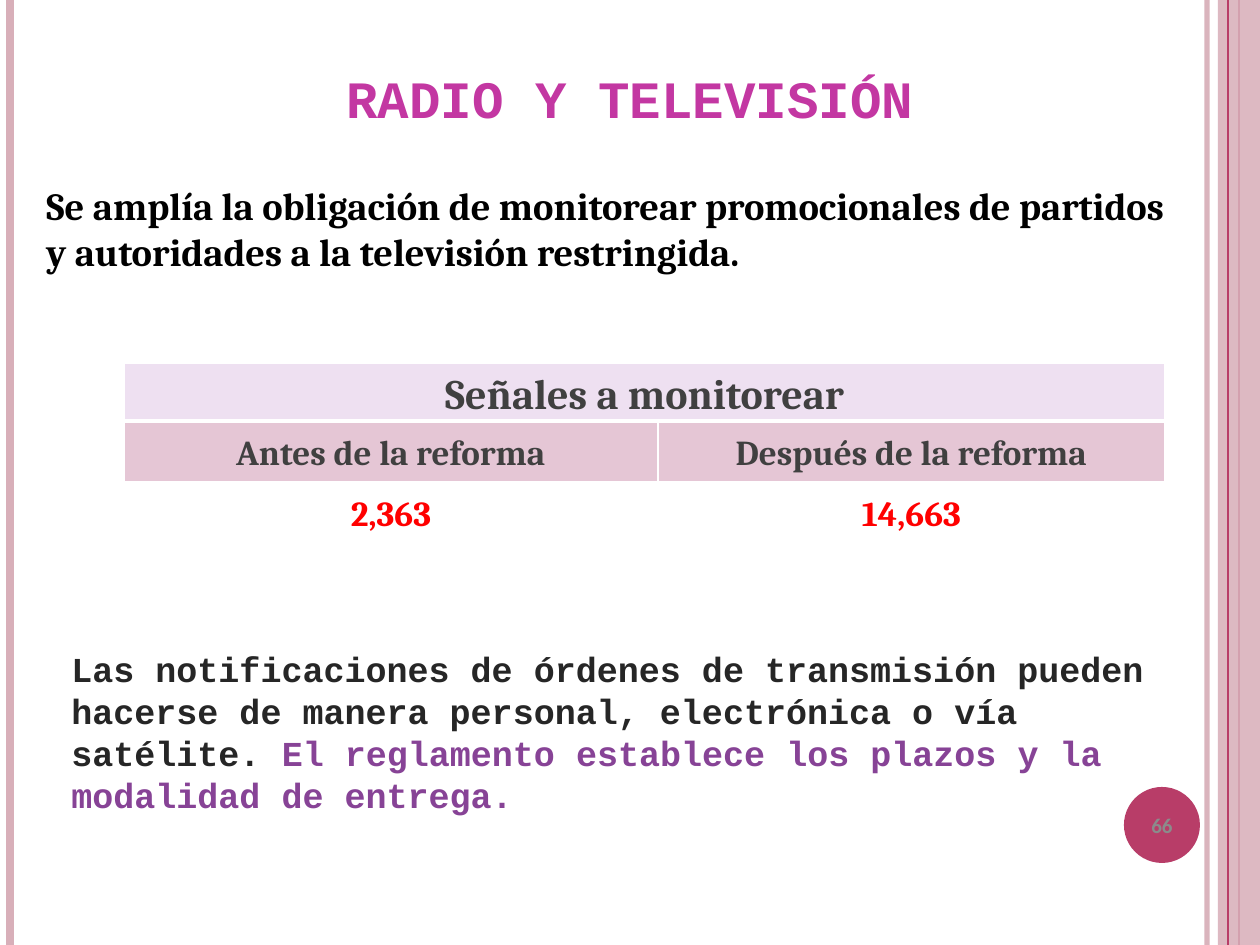
from lxml.etree import SubElement
from pptx import Presentation
from pptx.dml.color import RGBColor
from pptx.enum.shapes import MSO_CONNECTOR, MSO_SHAPE
from pptx.enum.text import MSO_ANCHOR, PP_ALIGN
from pptx.oxml.ns import qn
from pptx.util import Emu, Pt

SCALE = 914400 / 126
WIDTH, HEIGHT = 1260, 945
ROSE, CRIMSON = "D8AFB9", "B83D68"
SERIF, MONO = "Cambria", "Courier New"


def px(length):
    return Emu(round(length * SCALE))


def color(value):
    return RGBColor.from_string(value)


def set_alpha(element, percent):
    for node in element.iter(qn("a:srgbClr")):
        SubElement(node, qn("a:alpha"), val=str(percent * 1000))


def write(frame, *runs, size, font=None, align=PP_ALIGN.LEFT,
          anchor=MSO_ANCHOR.TOP, spacing=None):
    frame.word_wrap = True
    frame.vertical_anchor = anchor
    paragraph = frame.paragraphs[0]
    paragraph.alignment = align
    paragraph.line_spacing = spacing
    for text, fill in runs:
        run = paragraph.add_run()
        run.text = text
        run.font.size = Pt(size)
        run.font.bold = True
        run.font.name = font
        run.font.color.rgb = color(fill)


class SlideBuilder:
    def __init__(self, slide):
        self.slide = slide
        self.shapes = slide.shapes

    def background(self, fill):
        self.slide.background.fill.solid()
        self.slide.background.fill.fore_color.rgb = color(fill)

    def vertical_line(self, x, stroke, width, alpha=100):
        line = self.shapes.add_connector(
            MSO_CONNECTOR.STRAIGHT, px(x), 0, px(x), px(HEIGHT))
        line.line.color.rgb = color(stroke)
        line.line.width = Pt(width)
        properties = line._element.spPr
        SubElement(properties, qn("a:effectLst"))
        if alpha < 100:
            set_alpha(properties, alpha)

    def shape(self, kind, left, top, width, height, fill, alpha=100):
        shape = self.shapes.add_shape(kind, px(left), px(top), px(width), px(height))
        shape.shadow.inherit = False
        shape.fill.solid()
        shape.fill.fore_color.rgb = color(fill)
        shape.line.fill.background()
        if alpha < 100:
            set_alpha(shape._element.spPr.find(qn("a:solidFill")), alpha)
        return shape

    def text(self, left, top, width, height, *runs, **style):
        box = self.shapes.add_textbox(px(left), px(top), px(width), px(height))
        write(box.text_frame, *runs, **style)

    def table(self, left, top, columns, heights, rows):
        table = self.shapes.add_table(
            len(heights), len(columns), px(left), px(top),
            px(sum(columns)), px(sum(heights))).table
        for column, width in zip(table.columns, columns):
            column.width = px(width)
        for row, height in zip(table.rows, heights):
            row.height = px(height)
        table.cell(0, 0).merge(table.cell(0, len(columns) - 1))
        for row_index, (texts, size, ink, fill) in enumerate(rows):
            for column_index in range(len(columns)):
                cell = table.cell(row_index, column_index)
                if column_index < len(texts):
                    write(cell.text_frame, (texts[column_index], ink), size=size,
                          font=SERIF, align=PP_ALIGN.CENTER, spacing=1.15)
                self.style_cell(cell, fill, top=3 if row_index == 1 else 1,
                                bottom=3 if row_index == 0 else 1)

    def style_cell(self, cell, fill, top, bottom):
        cell.vertical_anchor = MSO_ANCHOR.MIDDLE
        cell.margin_left = cell.margin_right = 0
        cell.margin_top = cell.margin_bottom = 0
        properties = cell._tc.get_or_add_tcPr()
        for side, width in (("L", 1), ("R", 1), ("T", top), ("B", bottom)):
            border = SubElement(properties, qn(f"a:ln{side}"), w=str(Pt(width)))
            solid = SubElement(border, qn("a:solidFill"))
            SubElement(solid, qn("a:srgbClr"), val="FFFFFF")
        cell.fill.solid()
        cell.fill.fore_color.rgb = color(fill)


def main():
    presentation = Presentation()
    presentation.slide_width, presentation.slide_height = px(WIDTH), px(HEIGHT)
    builder = SlideBuilder(
        presentation.slides.add_slide(presentation.slide_layouts[6]))

    builder.background("FFFFFF")
    builder.vertical_line(1207, ROSE, 3, alpha=93)
    builder.vertical_line(10, ROSE, 4.5)
    builder.vertical_line(1239, CRIMSON, 1.5)
    builder.shape(MSO_SHAPE.RECTANGLE, 1218, 0, 42, HEIGHT, ROSE, alpha=87)
    builder.vertical_line(1228, CRIMSON, 0.75)
    badge = builder.shape(MSO_SHAPE.OVAL, 1124, 787, 76, 76, CRIMSON)
    write(badge.text_frame, ("66", "8B8B8B"), size=12,
          align=PP_ALIGN.CENTER, anchor=MSO_ANCHOR.MIDDLE)

    builder.text(63, 38, 1134, 97, ("RADIO Y TELEVISIÓN", "C337A2"), size=30,
                 font=MONO, align=PP_ALIGN.CENTER, anchor=MSO_ANCHOR.BOTTOM)
    builder.text(
        59, 641, 1111, 140,
        ("Las notificaciones de órdenes de transmisión pueden hacerse de manera "
         "personal, electrónica o vía satélite. ", "262626"),
        ("El reglamento establece los plazos y la modalidad de entrega.", "874396"),
        size=20, font=MONO)
    builder.text(
        34, 176, 1160, 106,
        ("Se amplía la obligación de monitorear promocionales de partidos y "
         "autoridades a la televisión restringida.", "000000"),
        size=22, font=SERIF)
    builder.table(124, 363, (534, 507), (58, 61, 61), (
        (("Señales a monitorear",), 24, "404040", "EEE0F1"),
        (("Antes de la reforma", "Después de la reforma"), 20, "404040", "E5C6D5"),
        (("2,363", "14,663"), 20, "FF0000", "FFFFFF")))

    presentation.save("out.pptx")


if __name__ == "__main__":
    main()
